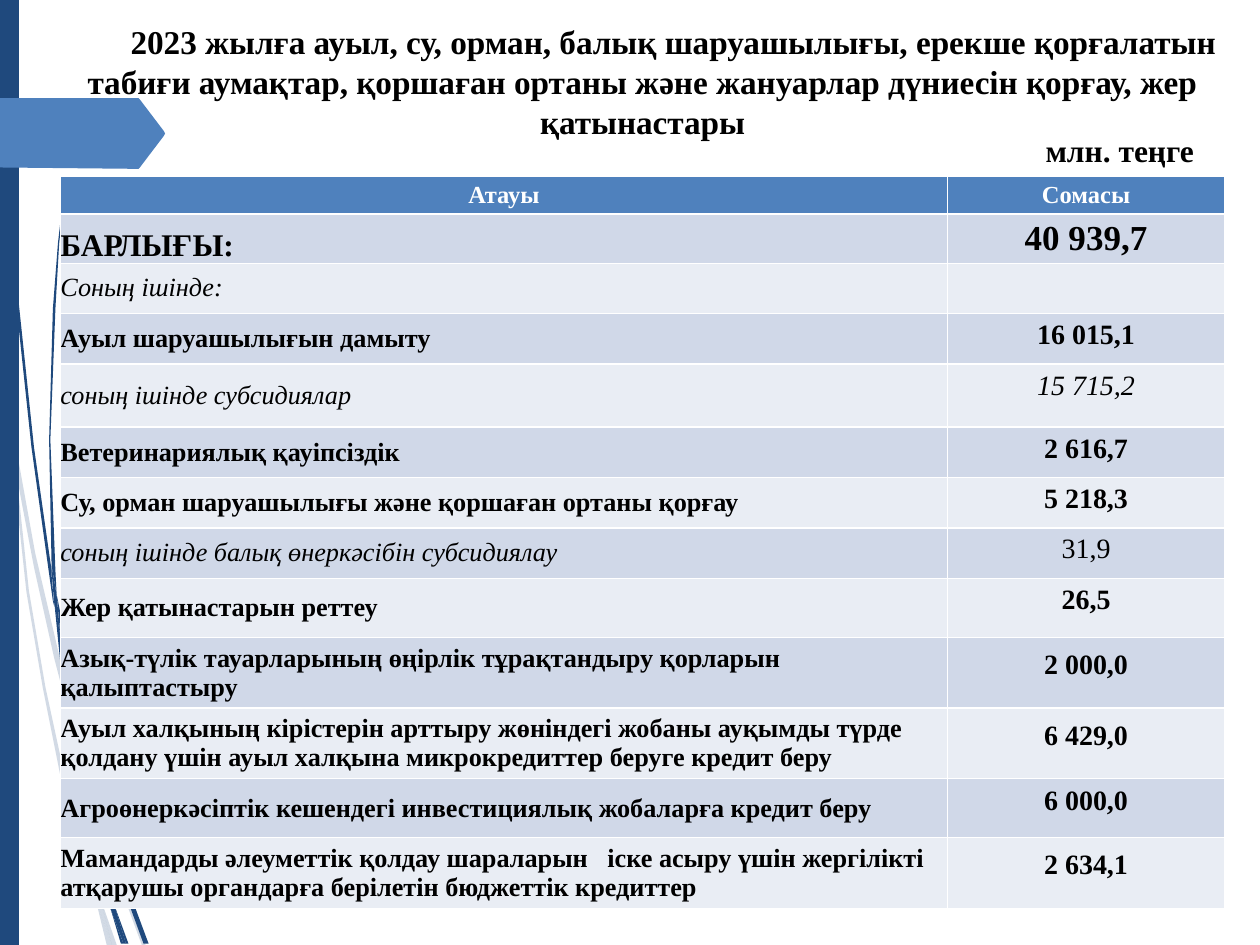
from lxml.etree import SubElement
from pptx import Presentation
from pptx.dml.color import RGBColor
from pptx.enum.shapes import MSO_SHAPE
from pptx.enum.text import MSO_ANCHOR, PP_ALIGN
from pptx.oxml.ns import qn
from pptx.util import Pt

PX = 9144  # 100 px to the inch
NAVY, BLUE, BLACK, WHITE = "1F497D", "4F81BD", "000000", "FFFFFF"


def paint(fill, color, alpha=100):
    fill.solid()
    fill.fore_color.rgb = RGBColor.from_string(color)
    if alpha < 100:
        clr = fill._xPr.find(qn("a:solidFill"))[0]
        SubElement(clr, qn("a:alpha"), val=str(alpha * 1000))


def write(tf, text, size, color=BLACK, bold=True, italic=False, align=PP_ALIGN.LEFT):
    p = tf.paragraphs[0]
    p.alignment = align
    r = p.add_run()
    r.text = text
    style = {"name": "Times New Roman", "size": Pt(size), "bold": bold, "italic": italic}
    for key, value in style.items():
        setattr(r.font, key, value)
    r.font.color.rgb = RGBColor.from_string(color)
    return p


prs = Presentation()
prs.slide_width, prs.slide_height = 1000 * PX, 750 * PX
s = prs.slides.add_slide(prs.slide_layouts[6])

# Outlines of the grass blades and the arrow tab, from back to front
pale_blades = [
    [(8, 350), (6, 322), (0, 282), (0, 299), (8, 344)],
    [(43, 522), (63, 599), (64, 586), (47, 520), (28, 439), (11, 345), (13, 376), (27, 450)],
    [(69, 607), (66, 596), (66, 610), (92, 694), (113, 751), (116, 751), (95, 692)],
    [(89, 751), (93, 751), (79, 711)],
    [(70, 683), (52, 619), (36, 545), (23, 469), (13, 376), (8, 350), (21, 470),
     (34, 546), (49, 621), (69, 693), (76, 714), (74, 707)],
    [(63, 599), (65, 646), (70, 683), (72, 692), (79, 711), (78, 706), (68, 646),
     (66, 610), (66, 608)],
    [(66, 584), (71, 522), (82, 462), (99, 404), (120, 349), (144, 296), (171, 245),
     (201, 198), (217, 175), (234, 153), (217, 175), (201, 197), (171, 244), (143, 294),
     (118, 348), (98, 403), (81, 461), (69, 522), (64, 584), (64, 586), (66, 596)],
    [(76, 714), (85, 751), (89, 751)],
    [(66, 608), (66, 610), (66, 596), (64, 586), (63, 599)],
    [(72, 692), (70, 683), (74, 707), (76, 714), (89, 751), (79, 711)],
]
dark_blades = [
    [(5, 110), (12, 233), (25, 355), (42, 477), (43, 481), (41, 457), (41, 453),
     (27, 355), (14, 232), (6, 109), (3, 48), (3, 0), (2, 0), (3, 48)],
    [(66, 592), (80, 645), (80, 633), (80, 631), (70, 590), (57, 532), (45, 472),
     (48, 505), (56, 549)],
    [(85, 649), (82, 641), (83, 656), (99, 708), (114, 749), (118, 749), (102, 706)],
    [(83, 691), (73, 657), (62, 607), (54, 556), (48, 505), (43, 477), (51, 557),
     (60, 608), (70, 659), (83, 708), (88, 722), (87, 717)],
    [(45, 472), (44, 453), (40, 349), (44, 245), (47, 193), (53, 141), (52, 141),
     (46, 193), (42, 245), (39, 349), (41, 449), (45, 472)],
    [(100, 749), (102, 749), (91, 719)],
    [(43, 478), (48, 505), (45, 472), (41, 449), (41, 453)],
    [(83, 633), (86, 592), (94, 552), (105, 513), (119, 476), (135, 440), (153, 406),
     (173, 374), (184, 359), (195, 344), (184, 358), (173, 373), (153, 405), (134, 439),
     (117, 474), (103, 512), (92, 551), (84, 591), (80, 631), (83, 641)],
    [(88, 722), (96, 749), (98, 749)],
    [(80, 645), (83, 692), (87, 706), (91, 719), (90, 716), (83, 656), (81, 651)],
    [(80, 645), (81, 651), (83, 656), (83, 641), (80, 631), (80, 633)],
    [(87, 706), (82, 691), (87, 717), (88, 722), (98, 749), (100, 749), (91, 719)],
]
arrow_tab = [(130, 108), (111, 133), (110, 134), (102, 134), (0, 133), (0, 78),
             (110, 78), (111, 79), (130, 104), (131, 106)]

bar = s.shapes.add_shape(MSO_SHAPE.RECTANGLE, 0, 0, 15 * PX, 750 * PX)
bar.shadow.inherit = False
bar.line.fill.background()
paint(bar.fill, NAVY)

for outlines, color, alpha in [(pale_blades, NAVY, 20), (dark_blades, NAVY, 100),
                               ([arrow_tab], BLUE, 100)]:
    for start, *rest in outlines:
        builder = s.shapes.build_freeform(*start, scale=PX)
        builder.add_line_segments(rest, close=True)
        sp = builder.convert_to_shape()
        sp.shadow.inherit = False
        sp.line.fill.background()
        paint(sp.fill, color, alpha)

title = s.shapes.add_textbox(37 * PX, 13 * PX, 946 * PX, 127 * PX)
tf = title.text_frame
tf.word_wrap = True
tf.margin_left = tf.margin_right = 7 * PX
tf.margin_top = tf.margin_bottom = 4 * PX
p = write(tf, "2023 жылға ауыл, су, орман, балық шаруашылығы, ерекше қорғалатын табиғи "
              "аумақтар, қоршаған ортаны және жануарлар дүниесін қорғау, жер қатынастары",
          19, align=PP_ALIGN.CENTER)
p._p.get_or_add_pPr().set("indent", str(49 * PX))

# name, amount, row height, bottom margin of name and of amount
rows = [
    ("Атауы", "Сомасы", 30, 0, 0),
    ("БАРЛЫҒЫ:", "40 939,7", 39, 0, 0),
    ("Соның ішінде:", "", 40, 9, 0),
    ("Ауыл шаруашылығын дамыту", "16 015,1", 40, 9, 6),
    ("соның ішінде субсидиялар", "15 715,2", 50, 0, 15),
    ("Ветеринариялық қауіпсіздік", "2 616,7", 40, 0, 6),
    ("Су, орман шаруашылығы және қоршаған ортаны қорғау", "5 218,3", 40, 0, 6),
    ("соның ішінде балық өнеркәсібін субсидиялау", "31,9", 40, 0, 6),
    ("Жер қатынастарын реттеу", "26,5", 47, 0, 12),
    ("Азық-түлік тауарларының өңірлік тұрақтандыру қорларын қалыптастыру",
     "2 000,0", 56, 0, 12),
    ("Ауыл халқының кірістерін арттыру жөніндегі жобаны ауқымды түрде қолдану үшін "
     "ауыл халқына микрокредиттер беруге кредит беру", "6 429,0", 56, 0, 12),
    ("Агроөнеркәсіптік кешендегі инвестициялық жобаларға кредит беру",
     "6 000,0", 47, 0, 12),
    ("Мамандарды әлеуметтік қолдау шараларын   іске асыру үшін жергілікті атқарушы "
     "органдарға берілетін бюджеттік кредиттер", "2 634,1", 56, 0, 12),
]
sizes = {0: (14, 14), 1: (18, 20)}
detail_rows = (2, 4, 7)
upright_amount = 7
bottom_names = (1, 2, 3)

table = s.shapes.add_table(len(rows), 2, 48 * PX, 140 * PX, 924 * PX, 581 * PX).table
table.columns[0].width, table.columns[1].width = 704 * PX, 220 * PX
for i, (name, amount, height, *bottoms) in enumerate(rows):
    table.rows[i].height = height * PX
    for j, text in enumerate((name, amount)):
        cell = table.cell(i, j)
        paint(cell.fill, BLUE if i == 0 else ("E9EDF4", "D0D8E8")[i % 2])
        cell.margin_left = cell.margin_right = cell.margin_top = 0
        cell.margin_bottom = bottoms[j] * PX
        low = j == 0 and i in bottom_names
        cell.vertical_anchor = MSO_ANCHOR.BOTTOM if low else MSO_ANCHOR.MIDDLE
        if text:
            detail = i in detail_rows
            write(cell.text_frame, text, sizes.get(i, (15, 16))[j],
                  color=BLACK if i else WHITE, bold=not detail,
                  italic=detail and (i, j) != (upright_amount, 1),
                  align=PP_ALIGN.CENTER if j or i == 0 else PP_ALIGN.LEFT)

unit = s.shapes.add_textbox(820 * PX, 99 * PX, 153 * PX, 40 * PX)
unit.text_frame.word_wrap = True
write(unit.text_frame, "млн. теңге", 18)

prs.save("out.pptx")
